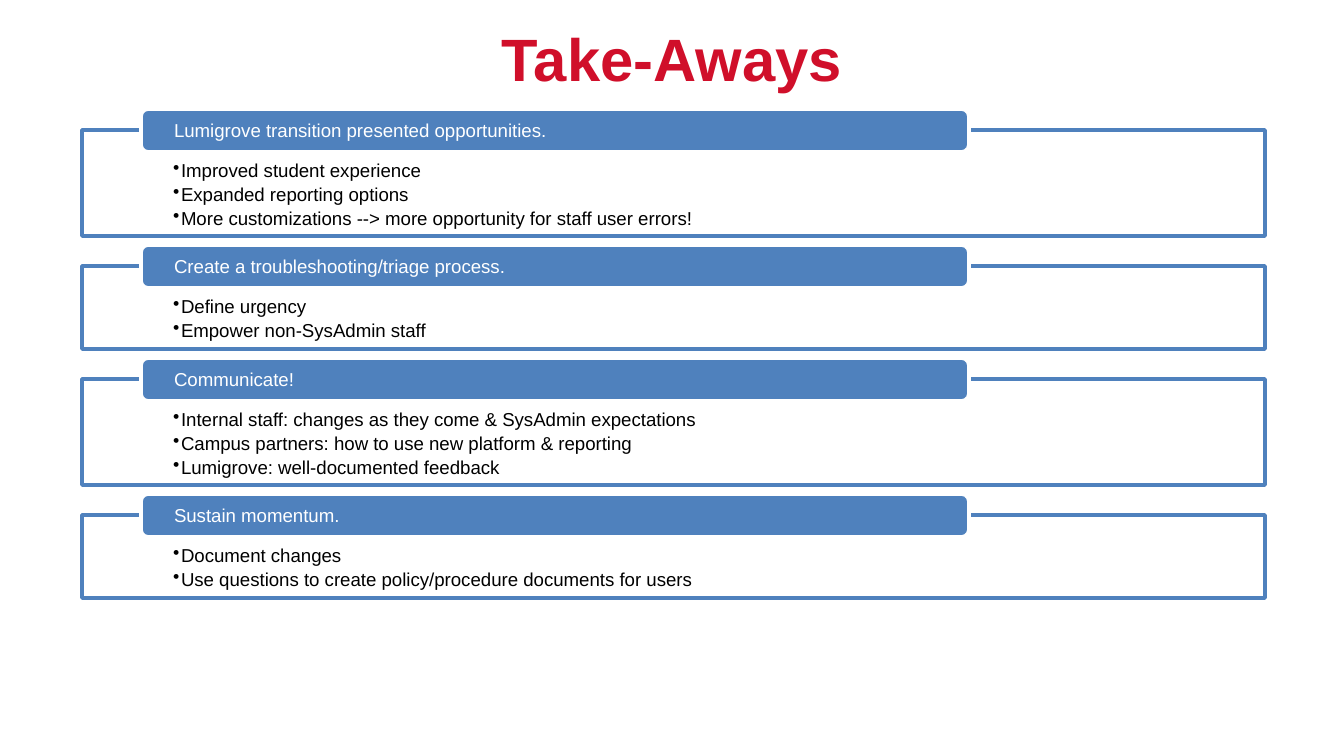
"""Build the Take-Aways slide: four titled panels with bullet points."""
from lxml import etree
from pptx import Presentation
from pptx import util as u
from pptx.dml.color import RGBColor
from pptx.enum import shapes, text
from pptx.oxml import ns

SCALE = 914400 / 134.4
THEME = {
    "font": "Arial", "title_size": 32, "text_size": 10,
    "red": RGBColor.from_string("D00F2A"), "blue": RGBColor.from_string("4F81BD"),
    "white": RGBColor.from_string("FFFFFF"), "black": RGBColor.from_string("000000"),
}
SECTIONS = [
    ("Lumigrove transition presented opportunities.", [
        "Improved student experience",
        "Expanded reporting options",
        "More customizations --> more opportunity for staff user errors!"]),
    ("Create a troubleshooting/triage process.", [
        "Define urgency",
        "Empower non-SysAdmin staff"]),
    ("Communicate!", [
        "Internal staff: changes as they come & SysAdmin expectations",
        "Campus partners: how to use new platform & reporting",
        "Lumigrove: well-documented feedback"]),
    ("Sustain momentum.", [
        "Document changes",
        "Use questions to create policy/procedure documents for users"]),
]


def px(*lengths):
    return [u.Emu(round(length * SCALE)) for length in lengths]


def write(box, lines, color, size, margins, anchor, align, bold=False, bullet=False):
    frame = box.text_frame
    sides = ("margin_left", "margin_top", "margin_right", "margin_bottom")
    frame_format = dict(zip(sides, px(*margins)), word_wrap=True, vertical_anchor=anchor)
    for name, value in frame_format.items():
        setattr(frame, name, value)
    for index, line in enumerate(lines):
        para = frame.add_paragraph() if index else frame.paragraphs[0]
        para.alignment = align
        if bullet:
            indent, = px(8)
            properties = para._p.get_or_add_pPr()
            properties.set("marL", str(indent))
            properties.set("indent", str(-indent))
            etree.SubElement(properties, ns.qn("a:buChar"), char="•")
            para.line_spacing = 0.9
            para.space_after = u.Pt(2)
        span = para.add_run()
        span.text = line
        span.font.color.rgb = color
        font_format = {"name": THEME["font"], "size": u.Pt(size), "bold": bold}
        for name, value in font_format.items():
            setattr(span.font, name, value)


deck = Presentation()
deck.slide_width, deck.slide_height = px(1344, 756)
page = deck.slides.add_slide(deck.slide_layouts[6])

title = page.shapes.add_textbox(*px(67, 28, 1210, 60))
write(title, ["Take-Aways"], THEME["red"], THEME["title_size"], (0, 0, 0, 0),
      text.MSO_ANCHOR.MIDDLE, text.PP_ALIGN.CENTER, bold=True)

top = 130
for heading, points in SECTIONS:
    height = 37 + 23 * len(points)
    panel = page.shapes.add_shape(shapes.MSO_SHAPE.RECTANGLE, *px(82, top, 1183, height))
    tab = page.shapes.add_shape(shapes.MSO_SHAPE.ROUNDED_RECTANGLE, *px(141, top - 21, 828, 43))
    for box, fill, line in ((panel, "white", "blue"), (tab, "blue", "white")):
        box.shadow.inherit = False
        box.fill.solid()
        box.fill.fore_color.rgb = THEME[fill]
        box.line.color.rgb = THEME[line]
        box.line.width = u.Pt(2)
    write(panel, points, THEME["black"], THEME["text_size"], (91, 31, 91, 11),
          text.MSO_ANCHOR.TOP, text.PP_ALIGN.LEFT, bullet=True)
    write(tab, [heading], THEME["white"], THEME["text_size"], (31, 0, 31, 0),
          text.MSO_ANCHOR.MIDDLE, text.PP_ALIGN.LEFT)
    top += height + 30

deck.save("out.pptx")
